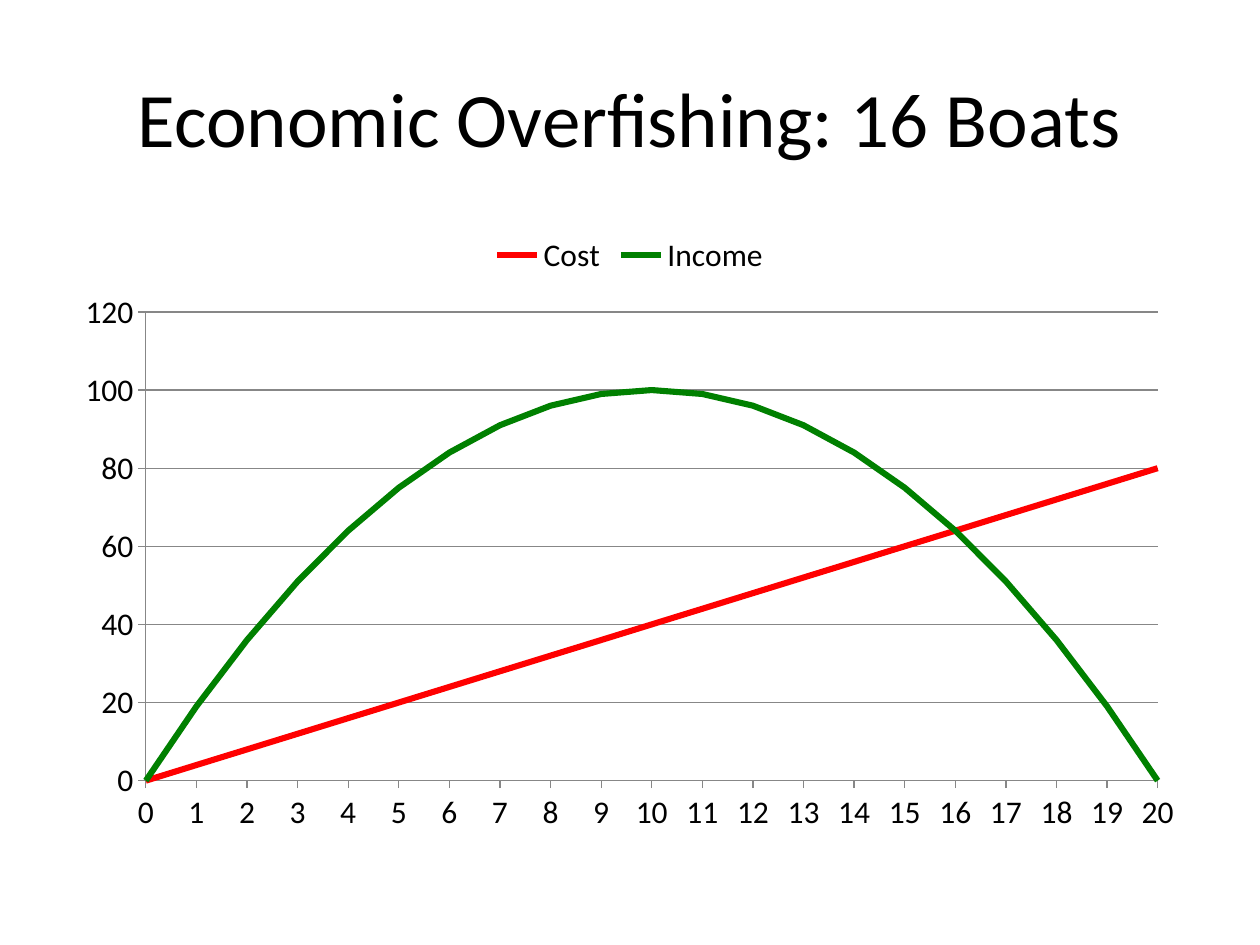
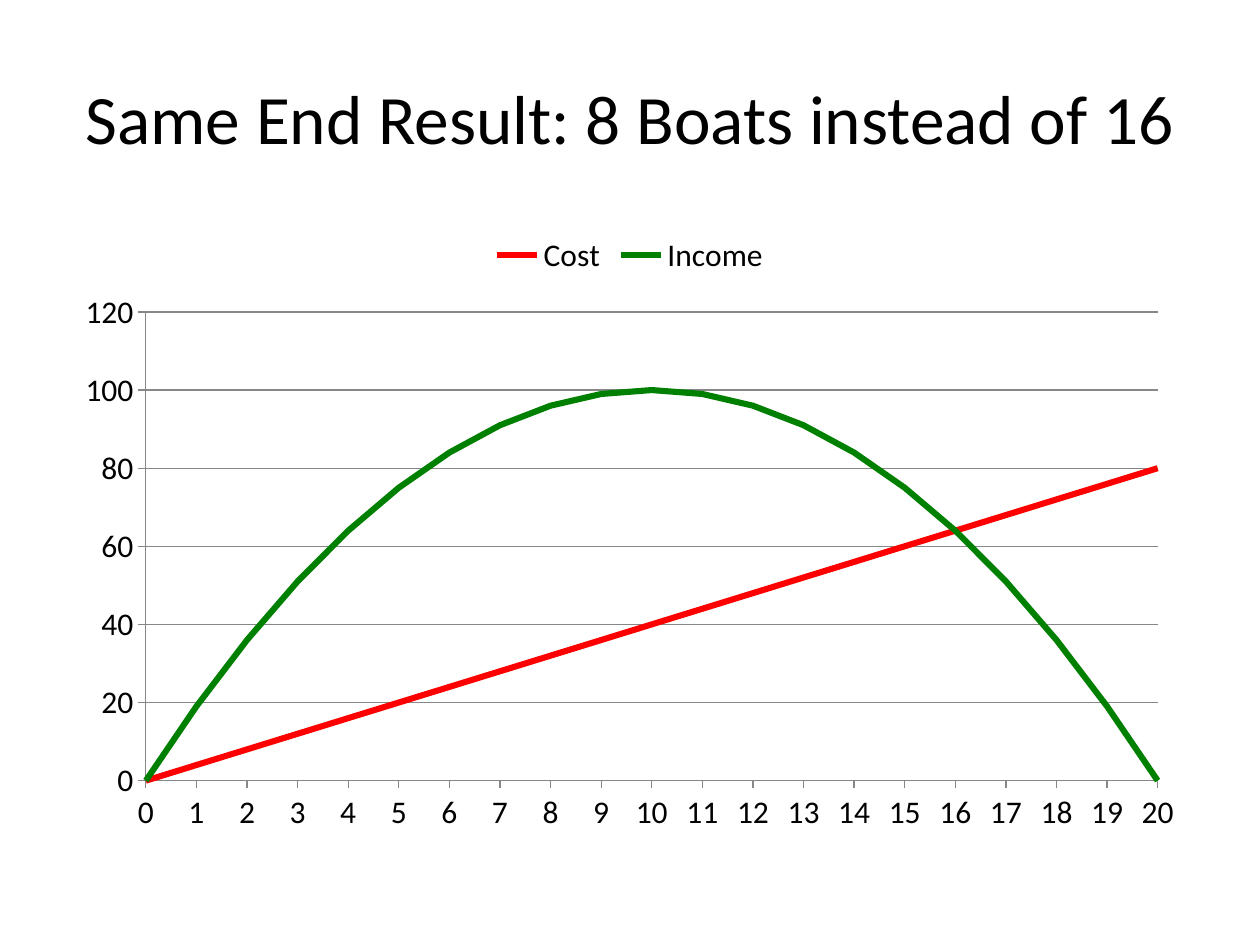
from lxml import etree
from pptx import Presentation
from pptx import util as u
from pptx.chart.data import CategoryChartData
from pptx.dml.color import RGBColor
from pptx.enum import chart as ch, text
from pptx.oxml import ns

FONT = "Calibri"
BLACK, GREY, RED, GREEN = "000000", "878787", "FF0000", "008000"
LEFT, WIDTH = 1.27, 22.86
TOP, HEIGHT = 4.45, 12.57
PLOT = {"x": 1.67 / WIDTH, "y": 1.84 / HEIGHT,
        "w": 20.4 / WIDTH, "h": 9.45 / HEIGHT}

BOATS = range(21)
CURVES = [
    ("Cost", RED, [4 * n for n in BOATS]),
    ("Income", GREEN, [n * (20 - n) for n in BOATS]),
]
TITLES = [
    ("Economic Overfishing: 16 Boats", 44),
    ("Same End Result: 8 Boats instead of 16", 39.6),
]


def paint(code):
    """Turn a hex string into a colour."""
    return RGBColor.from_string(code)


def style(font, size):
    font.name = FONT
    font.size = u.Pt(size)
    font.color.rgb = paint(BLACK)


def rule(line, code, width):
    line.color.rgb = paint(code)
    line.width = u.Pt(width)


def add_title(slide, words, size):
    box = slide.shapes.add_textbox(
        u.Cm(LEFT), u.Cm(0.76), u.Cm(WIDTH), u.Cm(3.18))
    frame = box.text_frame
    frame.word_wrap = True
    frame.vertical_anchor = text.MSO_ANCHOR.MIDDLE
    para = frame.paragraphs[0]
    para.text = words
    para.alignment = text.PP_ALIGN.CENTER
    style(para.font, size)


def place_plot(chart):
    """Fix the inner plot area and start the curves on the value axis."""
    area = chart.plots[0]._element.getparent()
    old = area.find(ns.qn("c:layout"))
    if old is not None:
        area.remove(old)
    layout = etree.Element(ns.qn("c:layout"))
    area.insert(0, layout)
    manual = etree.SubElement(layout, ns.qn("c:manualLayout"))
    parts = [("layoutTarget", "inner"), ("xMode", "edge"), ("yMode", "edge")]
    for tag, value in parts + list(PLOT.items()):
        etree.SubElement(manual, ns.qn("c:" + tag), val=str(value))

    unit = chart.value_axis._element.find(ns.qn("c:majorUnit"))
    unit.addprevious(etree.Element(ns.qn("c:crossBetween"), val="midCat"))


def add_curves(slide):
    data = CategoryChartData()
    data.categories = BOATS
    for name, _, values in CURVES:
        data.add_series(name, values)
    chart = slide.shapes.add_chart(
        ch.XL_CHART_TYPE.LINE, u.Cm(LEFT), u.Cm(TOP),
        u.Cm(WIDTH), u.Cm(HEIGHT), data).chart

    style(chart.font, 18)
    chart.has_title = False
    chart.has_legend = True
    chart.legend.position = ch.XL_LEGEND_POSITION.TOP
    chart.legend.include_in_layout = False

    for axis in (chart.category_axis, chart.value_axis):
        axis.major_tick_mark = ch.XL_TICK_MARK.OUTSIDE
        rule(axis.format.line, GREY, 0.75)
    scale = chart.value_axis
    scale.minimum_scale, scale.maximum_scale, scale.major_unit = 0, 120, 20
    rule(scale.major_gridlines.format.line, GREY, 0.75)

    plot = chart.plots[0]
    plot.vary_by_categories = False
    for series, (_, code, _) in zip(plot.series, CURVES):
        series.smooth = False
        rule(series.format.line, code, 3.5)
    place_plot(chart)


def main():
    deck = Presentation()
    deck.slide_width, deck.slide_height = u.Cm(25.4), u.Cm(19.05)
    for words, size in TITLES:
        slide = deck.slides.add_slide(deck.slide_layouts[6])
        add_title(slide, words, size)
        add_curves(slide)
    deck.save("out.pptx")


if __name__ == "__main__":
    main()
